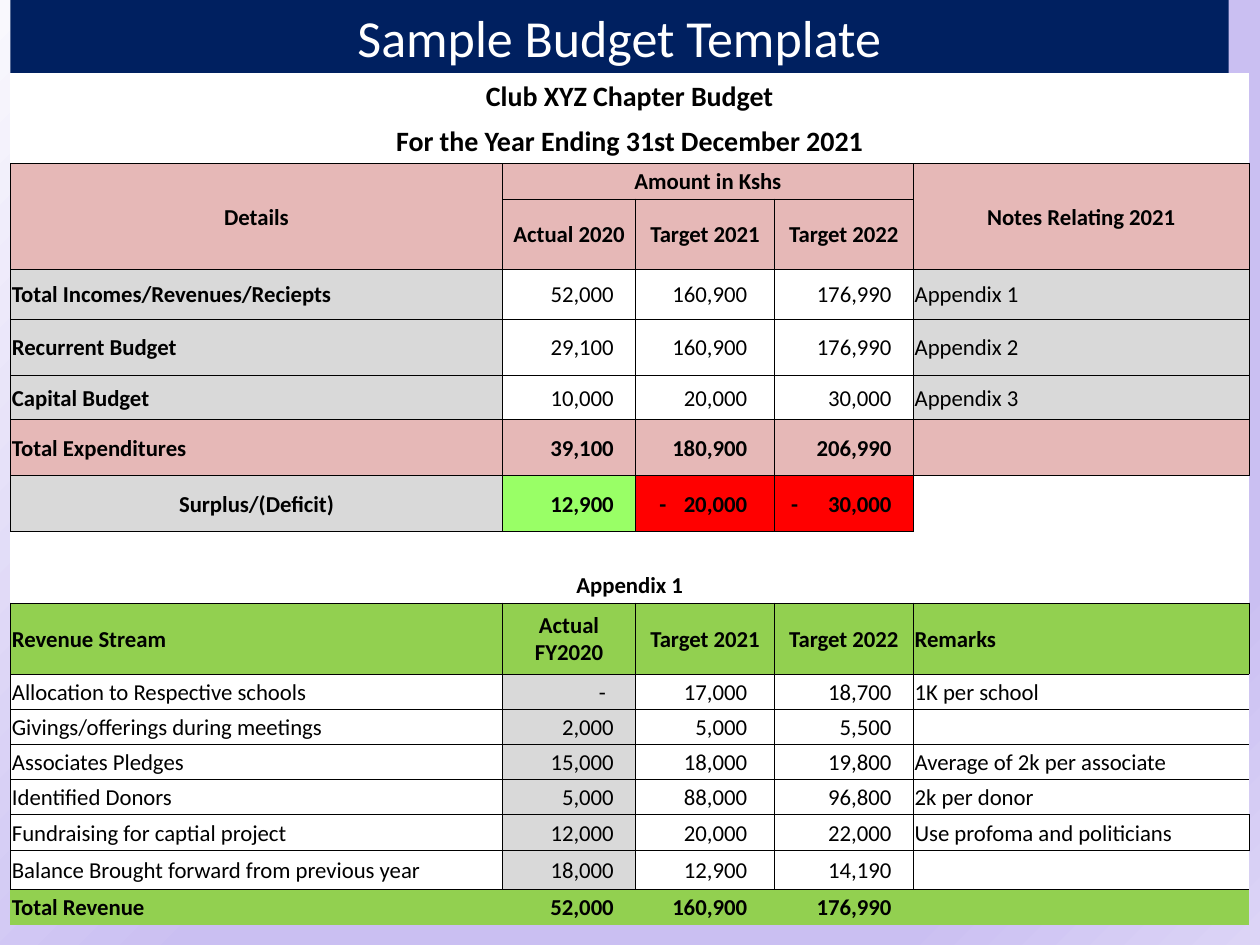
from lxml.etree import SubElement
from pptx import Presentation
from pptx.dml.color import RGBColor
from pptx.enum.text import MSO_ANCHOR, MSO_AUTO_SIZE, PP_ALIGN
from pptx.oxml.ns import qn
from pptx.util import Cm, Pt

TITLE = "Sample Budget Template"
NAVY, WHITE, BLACK = "002060", "FFFFFF", "000000"
PINK, GREY, GREEN, LIME, RED = "E6B8B7", "D9D9D9", "92D050", "99FF66", "FF0000"
BACKGROUND = [(0, "F9F8FD"), (52, "CABFF2"), (83, "CABFF2"), (100, "DCD4F6")]
NO_STYLE = "{2D5ABB26-0587-4C30-8999-92F81FD0307C}"

BOX = ("LRTB",) * 5
OPEN = ("LRTB",) * 4 + ("LTB",)
KINDS = {
    "heading": ([WHITE] * 5, "11111", "CCCCC", ("",) * 5),
    "subheading": ([WHITE] * 5, "11111", "CCCCC", ("B",) * 5),
    "header": ([PINK] * 5, "11111", "CCCCC", BOX),
    "budget": ([GREY, WHITE, WHITE, WHITE, GREY], "10000", "LRRRL", BOX),
    "spending": ([PINK] * 5, "11111", "LRRRL", BOX),
    "balance": ([GREY, LIME, RED, RED, WHITE], "11111", "CRRRL", BOX[:4] + ("LT",)),
    "gap": ([WHITE] * 5, "00000", "LLLLL", ("T",) * 4 + ("",)),
    "streams": ([GREEN] * 5, "11111", "LCCCL", BOX),
    "stream": ([WHITE, GREY, WHITE, WHITE, WHITE], "00000", "LRRRL", OPEN),
    "boxed stream": ([WHITE, GREY, WHITE, WHITE, WHITE], "00000", "LRRRL", BOX),
    "total": ([GREEN] * 5, "11111", "LRRRL", ("T",) * 5),
}
EMPTY = [""] * 5
ROWS = [
    (0.91, "heading", ["Club XYZ Chapter Budget"] + EMPTY[1:]),
    (0.91, "subheading", ["For the Year Ending 31st December 2021"] + EMPTY[1:]),
    (0.71, "header", ["Details", "Amount in Kshs", "", "", "Notes Relating 2021"]),
    (1.43, "header", ["", "Actual 2020", "Target 2021", "Target 2022", ""]),
    (0.99, "budget", ["Total Incomes/Revenues/Reciepts", "52,000", "160,900", "176,990", "Appendix 1"]),
    (1.14, "budget", ["Recurrent Budget", "29,100", "160,900", "176,990", "Appendix 2"]),
    (0.89, "budget", ["Capital Budget", "10,000", "20,000", "30,000", "Appendix 3"]),
    (1.13, "spending", ["Total Expenditures", "39,100", "180,900", "206,990", ""]),
    (1.13, "balance", ["Surplus/(Deficit)", "12,900", "-\t20,000", "-\t30,000", ""]),
    (0.72, "gap", EMPTY),
    (0.72, "subheading", ["Appendix 1"] + EMPTY[1:]),
    (1.43, "streams", ["Revenue Stream", "Actual FY2020", "Target 2021", "Target 2022", "Remarks"]),
    (0.71, "stream", ["Allocation to Respective schools", "-", "17,000", "18,700", "1K per school"]),
    (0.71, "stream", ["Givings/offerings during meetings", "2,000", "5,000", "5,500", ""]),
    (0.71, "stream", ["Associates Pledges", "15,000", "18,000", "19,800", "Average of 2k per associate"]),
    (0.71, "stream", ["Identified Donors", "5,000", "88,000", "96,800", "2k per donor"]),
    (0.71, "boxed stream", ["Fundraising for captial project", "12,000", "20,000", "22,000", "Use profoma and politicians"]),
    (0.79, "stream", ["Balance Brought forward from previous year", "18,000", "12,900", "14,190", ""]),
    (0.71, "total", ["Total Revenue", "52,000", "160,900", "176,990", ""]),
]
MERGES = [(0, 0, 0, 4), (1, 0, 1, 4), (2, 0, 3, 0), (2, 1, 2, 3), (2, 4, 3, 4), (10, 0, 10, 4)]
WIDTHS = [9.92, 2.68, 2.8, 2.8, 6.77]
NUMBER_INSET = {1: 0.44, 2: 0.55, 3: 0.44}
MINUS_INSET = {2: 0.48, 3: 0.34}
ALIGN = {"L": PP_ALIGN.LEFT, "C": PP_ALIGN.CENTER, "R": PP_ALIGN.RIGHT}


def rgb(value):
    return RGBColor.from_string(value)


def paint(shape, color):
    shape.fill.solid()
    shape.fill.fore_color.rgb = rgb(color)


def format_run(r, size, color, bold=False):
    r.font.name, r.font.size, r.font.bold = "Calibri", Pt(size), bold
    r.font.color.rgb = rgb(color)


def set_background(s):
    s.background.fill.gradient()
    grad = s._element.find(".//" + qn("a:gradFill"))
    for child in list(grad):
        grad.remove(child)
    stops = SubElement(grad, qn("a:gsLst"))
    for pos, color in BACKGROUND:
        gs = SubElement(stops, qn("a:gs"), pos=str(pos * 1000))
        SubElement(gs, qn("a:srgbClr"), val=color)
    shade = SubElement(grad, qn("a:path"), path="circle")
    SubElement(shade, qn("a:fillToRect"), r="100000", b="100000")


def add_title(s):
    sp = s.shapes.title
    sp.left, sp.top, sp.width, sp.height = Cm(0.21), Cm(0), Cm(24.56), Cm(1.47)
    paint(sp, NAVY)
    tf = sp.text_frame
    tf.text = TITLE
    tf.auto_size = MSO_AUTO_SIZE.NONE
    tf.vertical_anchor = MSO_ANCHOR.MIDDLE
    p = tf.paragraphs[0]
    p.alignment = PP_ALIGN.CENTER
    format_run(p.runs[0], 29.7, WHITE)


def set_borders(cell, edges):
    tcPr = cell._tc.get_or_add_tcPr()
    for edge in "LRTB":
        ln = SubElement(tcPr, qn("a:ln" + edge), w=str(Pt(0.5)))
        if edge in edges:
            SubElement(SubElement(ln, qn("a:solidFill")), qn("a:srgbClr"), val=BLACK)
        else:
            SubElement(ln, qn("a:noFill"))


def fill_cell(cell, text, col, size, color, bold, align, edges):
    set_borders(cell, edges)
    paint(cell, color)
    cell.vertical_anchor = MSO_ANCHOR.MIDDLE
    side = 0.1 if align == "C" else 0.03
    left, right = side, side
    if align == "R":
        right = 0.6 if text == "-" else NUMBER_INSET[col]
    p = cell.text_frame.paragraphs[0]
    p.text = text
    p.alignment = ALIGN[align]
    if "\t" in text:
        left = MINUS_INSET[col]
        p.alignment = PP_ALIGN.LEFT
        tabs = SubElement(p._p.get_or_add_pPr(), qn("a:tabLst"))
        stop = Cm(WIDTHS[col] - left - right)
        SubElement(tabs, qn("a:tab"), pos=str(stop), algn="r")
        right = side
    cell.margin_left, cell.margin_right = Cm(left), Cm(right)
    cell.margin_top, cell.margin_bottom = Cm(0.03), Cm(0)
    for r in p.runs:
        format_run(r, size, BLACK, bold)
    if not text:
        SubElement(p._p, qn("a:endParaRPr"), sz=str(size * 100))


def add_budget(s):
    height = sum(row[0] for row in ROWS)
    frame = s.shapes.add_table(len(ROWS), len(WIDTHS), Cm(0.21), Cm(1.48), Cm(sum(WIDTHS)), Cm(height))
    table = frame.table
    table.first_row = table.horz_banding = False
    table._tbl.tblPr.find(qn("a:tableStyleId")).text = NO_STYLE
    for column, width in zip(table.columns, WIDTHS):
        column.width = Cm(width)
    for top, left, bottom, right in MERGES:
        table.cell(top, left).merge(table.cell(bottom, right))
    for i, (height, kind, texts) in enumerate(ROWS):
        table.rows[i].height = Cm(height)
        size = 16 if i < 2 else 13
        for j, (text, color, bold, align, edges) in enumerate(zip(texts, *KINDS[kind])):
            cell = table.cell(i, j)
            if not cell.is_spanned:
                fill_cell(cell, text, j, size, color, bold == "1", align, edges)


def main():
    prs = Presentation()
    prs.slide_width, prs.slide_height = Cm(25.4), Cm(19.05)
    s = prs.slides.add_slide(prs.slide_layouts[5])
    set_background(s)
    add_title(s)
    add_budget(s)
    prs.save("out.pptx")


if __name__ == "__main__":
    main()
